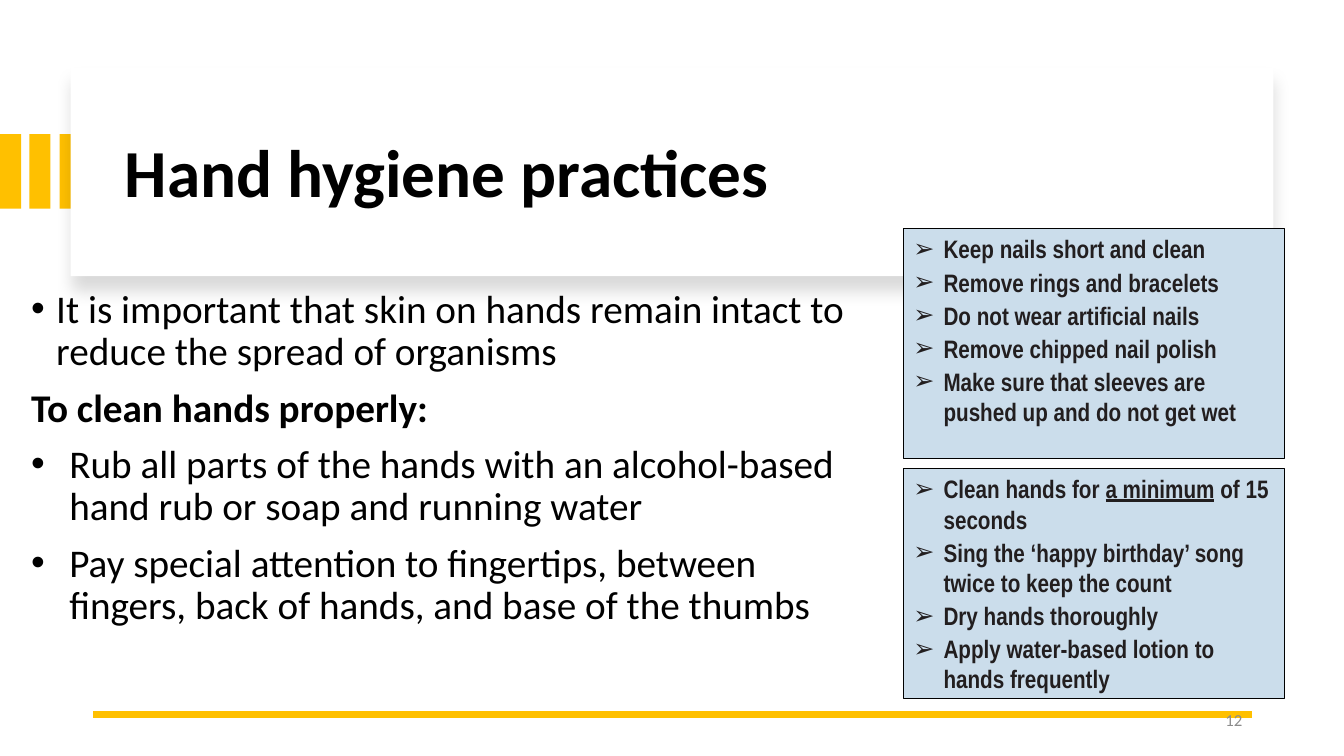
from lxml import etree
from pptx import Presentation
from pptx.dml.color import RGBColor
from pptx.enum.shapes import MSO_CONNECTOR, MSO_SHAPE
from pptx.enum.text import MSO_ANCHOR, PP_ALIGN
from pptx.oxml.ns import qn
from pptx.util import Pt

RECTANGLE = MSO_SHAPE.RECTANGLE
STRAIGHT = MSO_CONNECTOR.STRAIGHT
TOP, MIDDLE = MSO_ANCHOR.TOP, MSO_ANCHOR.MIDDLE
LEFT, RIGHT = PP_ALIGN.LEFT, PP_ALIGN.RIGHT

EMU_PER_PX = 9144  # 100 px to the inch
COLORS = {
    "accent": "FFC000",
    "card": "FFFFFF",
    "panel": "CBDDEB",
    "panel_text": "221E1F",
    "black": "000000",
    "page_number": "8C8C8C",
}
BODY_FONT = "Calibri"
PANEL_FONT = "Arial Narrow"

# Each paragraph: text, hanging indent in px (0 for no bullet), bold
BODY_PARAGRAPHS = [
    ("It is important that skin on hands remain intact to reduce the spread of organisms", 25, False),
    ("To clean hands properly:", 0, True),
    ("Rub all parts of the hands with an alcohol-based hand rub or soap and running water", 38, False),
    ("Pay special attention to fingertips, between fingers, back of hands, and base of the thumbs", 38, False),
]
# Each panel: top in px, items; an item is a list of runs, every second one underlined
PANELS = [
    (227, [
        ["Keep nails short and clean"],
        ["Remove rings and bracelets"],
        ["Do not wear artificial nails"],
        ["Remove chipped nail polish"],
        ["Make sure that sleeves are pushed up and do not get wet"],
    ]),
    (465, [
        ["Clean hands for ", "a minimum", " of 15 seconds"],
        ["Sing the ‘happy birthday’ song twice to keep the count"],
        ["Dry hands thoroughly"],
        ["Apply water-based lotion to hands frequently"],
    ]),
]


def px(length):
    return length * EMU_PER_PX


def color(name):
    return RGBColor.from_string(COLORS[name])


def style_run(run, size, font_name, color_name, bold=False):
    run.font.size = Pt(size)
    run.font.name = font_name
    run.font.bold = bold
    run.font.color.rgb = color(color_name)


def set_bullet(paragraph, character, indent):
    """Give the paragraph a bullet with a hanging indent in px."""
    properties = paragraph._p.get_or_add_pPr()
    properties.set("marL", str(px(indent)))
    properties.set("indent", str(-px(indent)))
    etree.SubElement(properties, qn("a:buFont"), typeface="Arial")
    etree.SubElement(properties, qn("a:buChar"), char=character)


def add_rectangle(shapes, left, top, width, height, fill, outline=None):
    shape = shapes.add_shape(RECTANGLE, px(left), px(top), px(width), px(height))
    shape.shadow.inherit = False
    shape.fill.solid()
    shape.fill.fore_color.rgb = color(fill)
    if outline:
        shape.line.color.rgb = color(outline)
        shape.line.width = Pt(0.75)
    else:
        shape.line.fill.background()
    return shape


def add_soft_shadow(shape):
    effects = shape._element.spPr.find(qn("a:effectLst"))
    shadow = etree.SubElement(
        effects, qn("a:outerShdw"), blurRad=str(Pt(11)), dist=str(Pt(10)),
        dir="5400000", algn="t", rotWithShape="0")
    shade = etree.SubElement(shadow, qn("a:srgbClr"), val=COLORS["black"])
    etree.SubElement(shade, qn("a:alpha"), val="15000")


def add_text_frame(slide, left, top, width, height):
    box = slide.shapes.add_textbox(px(left), px(top), px(width), px(height))
    text_frame = box.text_frame
    text_frame.word_wrap = True
    text_frame.vertical_anchor = MIDDLE
    return text_frame


def add_line_of_text(slide, bounds, text, size, color_name, bold=False, alignment=LEFT):
    text_frame = add_text_frame(slide, *bounds)
    text_frame.text = text
    paragraph = text_frame.paragraphs[0]
    paragraph.alignment = alignment
    paragraph.line_spacing = 0.9
    style_run(paragraph.runs[0], size, BODY_FONT, color_name, bold)


def add_body(slide):
    text_frame = add_text_frame(slide, 21, 251, 854, 408)
    text_frame.text = "\n".join(text for text, _, _ in BODY_PARAGRAPHS)
    for paragraph, (_, indent, bold) in zip(text_frame.paragraphs, BODY_PARAGRAPHS):
        paragraph.line_spacing = 0.9
        paragraph.space_before = Pt(10)
        if indent:
            set_bullet(paragraph, "•", indent)
        style_run(paragraph.runs[0], 28, BODY_FONT, "black", bold)


def add_panel(slide, top, items):
    panel = add_rectangle(slide.shapes, 896, top, 378, 228, "panel", "black")
    text_frame = panel.text_frame
    text_frame.word_wrap = True
    text_frame.vertical_anchor = TOP
    for index, item in enumerate(items):
        paragraph = text_frame.add_paragraph() if index else text_frame.paragraphs[0]
        paragraph.alignment = LEFT
        paragraph.space_after = Pt(2 if index < len(items) - 1 else 0)
        set_bullet(paragraph, "➢", 30)
        for position, text in enumerate(item):
            run = paragraph.add_run()
            run.text = text
            style_run(run, 18, PANEL_FONT, "panel_text", bold=True)
            run.font.underline = position % 2 == 1


def add_footer_line(slide):
    line = slide.shapes.add_connector(STRAIGHT, px(1242), px(709), px(92), px(709))
    line.line.color.rgb = color("accent")
    line.line.width = Pt(4.5)
    etree.SubElement(line._element.spPr, qn("a:effectLst"))


def main():
    presentation = Presentation()
    presentation.slide_width = px(1333)
    presentation.slide_height = px(750)
    slide = presentation.slides.add_slide(presentation.slide_layouts[6])

    bars = slide.shapes.add_group_shape()
    for index in range(3):
        add_rectangle(bars.shapes, index * 59 // 2, 133, 21, 74, "accent")
    title_card = add_rectangle(slide.shapes, 70, 67, 1193, 207, "card")
    add_soft_shadow(title_card)
    add_line_of_text(slide, (114, 89, 1087, 170), "Hand hygiene practices", 48, "black", bold=True)
    add_body(slide)
    add_footer_line(slide)
    for top, items in PANELS:
        add_panel(slide, top, items)
    add_line_of_text(slide, (942, 695, 300, 40), "12", 12, "page_number", alignment=RIGHT)

    presentation.save("out.pptx")


if __name__ == "__main__":
    main()
